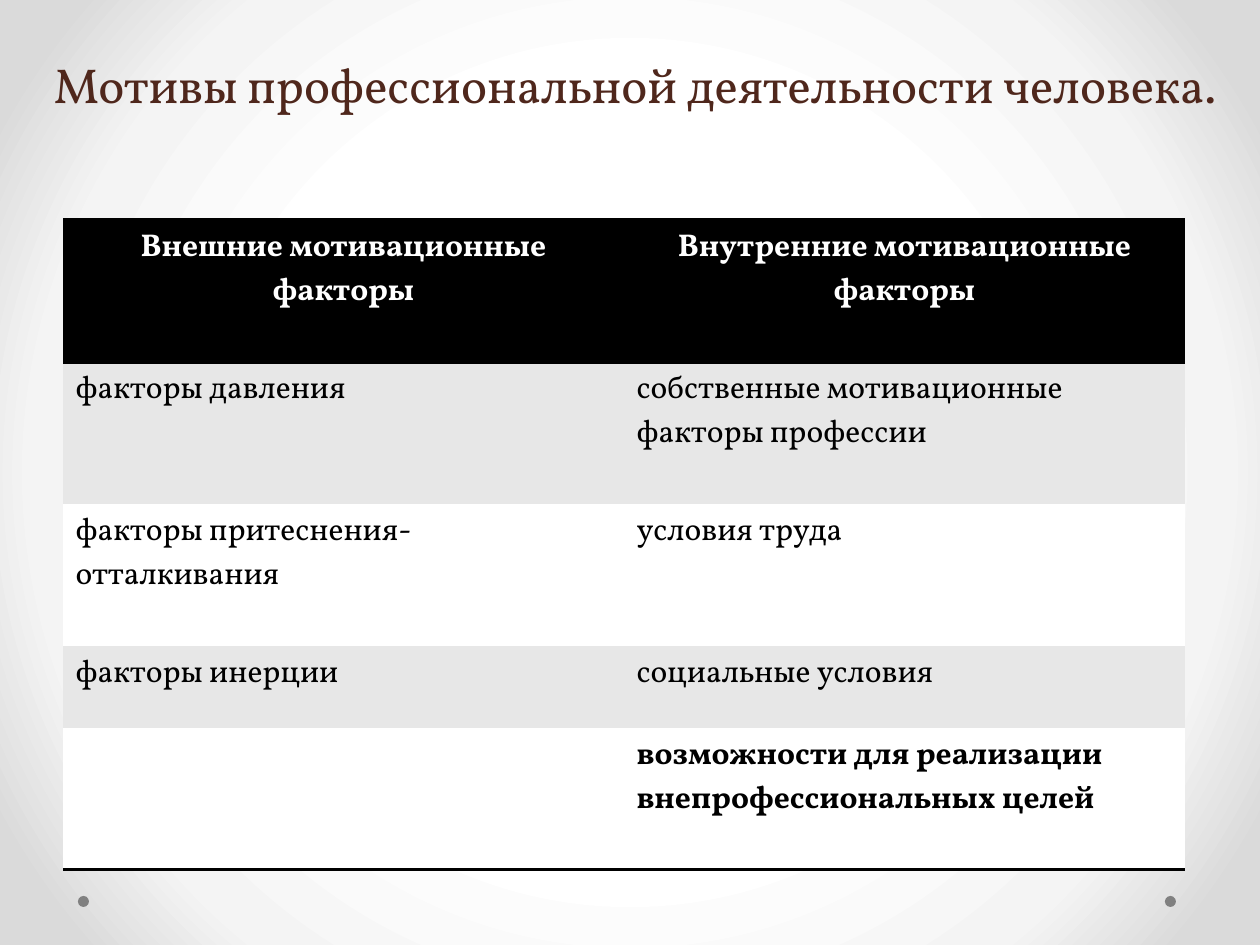
"""Build the slide on the motives of professional activity."""
from pptx import Presentation
from pptx.dml.color import RGBColor
from pptx.enum.shapes import MSO_SHAPE as Shape
from pptx.enum.text import MSO_ANCHOR as Anchor, PP_ALIGN as Align
from pptx.oxml import parse_xml
from pptx.oxml.ns import nsdecls, qn
from pptx.util import Emu, Pt

PX = 914400 // 126
BLACK = RGBColor(0x00, 0x00, 0x00)
WHITE = RGBColor(0xFF, 0xFF, 0xFF)
MIST = RGBColor(0xF4, 0xF4, 0xF4)
SILVER = RGBColor(0xDA, 0xDA, 0xDA)
BAND = RGBColor(0xE7, 0xE7, 0xE7)
GRAY = RGBColor(0x80, 0x80, 0x80)
BROWN = RGBColor(0x4F, 0x27, 0x1C)
PLAIN_STYLE = "{2D5ABB26-0587-4C30-8999-92F81FD0307C}"

FACTORS = [
    ("Внешние мотивационные факторы", "Внутренние мотивационные факторы"),
    ("факторы давления", "собственные мотивационные факторы профессии"),
    ("факторы притеснения-отталкивания", "условия труда"),
    ("факторы инерции", "социальные условия"),
    ("", "возможности для реализации внепрофессиональных целей"),
]
ROW_HEIGHTS = [142, 142, 142, 82, 142]


def px(*lengths):
    return [Emu(length * PX) for length in lengths]


def write(frame, text, *, size=18, color=BLACK, bold=False, align=Align.LEFT,
          spacing=None, font="Vollkorn"):
    paragraph = frame.paragraphs[0]
    paragraph.alignment = align
    if spacing:
        paragraph.line_spacing = Pt(spacing)
    style = paragraph.font
    if text:
        run = paragraph.add_run()
        run.text = text
        style = run.font
    style.name, style.size, style.bold = font, Pt(size), bold
    style.color.rgb = color


class Deck:
    def __init__(self, width, height):
        self.show = Presentation()
        self.show.slide_width, self.show.slide_height = px(width, height)
        self.slide = self.show.slides.add_slide(self.show.slide_layouts[6])

    def radial_background(self, stops):
        self.slide.background.fill.solid()
        holder = next(self.slide.element.iter(qn("p:bgPr")))
        marks = "".join(f'<a:gs pos="{percent * 1000}"><a:srgbClr val="{color}"/></a:gs>'
                        for percent, color in stops)
        holder.replace(holder[0], parse_xml(
            f'<a:gradFill {nsdecls("a")} rotWithShape="1"><a:gsLst>{marks}</a:gsLst>'
            '<a:path path="circle"><a:fillToRect l="50000" t="50000" r="50000" b="50000"/>'
            '</a:path></a:gradFill>'))

    def dot(self, left, top, size, color):
        dot = self.slide.shapes.add_shape(Shape.OVAL, *px(left, top, size, size))
        dot.shadow.inherit = False
        dot.fill.solid()
        dot.fill.fore_color.rgb = color
        dot.line.fill.background()

    def title(self, text, box, bottom_inset, **style):
        frame = self.slide.shapes.add_textbox(*px(*box)).text_frame
        frame.word_wrap = True
        frame.vertical_anchor = Anchor.BOTTOM
        frame.margin_bottom, = px(bottom_inset)
        write(frame, text, **style)

    def rule(self, cell, *sides):
        for side in sides:
            cell._tc.get_or_add_tcPr().append(parse_xml(
                f'<a:ln{side} {nsdecls("a")} w="{Pt(2)}"><a:solidFill>'
                f'<a:srgbClr val="{BLACK}"/></a:solidFill></a:ln{side}>'))

    def table(self, rows, heights, left, top, width):
        frame = self.slide.shapes.add_table(
            len(rows), len(rows[0]), *px(left, top, width, sum(heights)))
        table = frame.table
        table.horz_banding = False
        next(table._tbl.iter(qn("a:tableStyleId"))).text = PLAIN_STYLE
        last = len(rows) - 1
        for number, (texts, height) in enumerate(zip(rows, heights)):
            table.rows[number].height, = px(height)
            header = number == 0
            for column, text in enumerate(texts):
                cell = table.cell(number, column)
                if header:
                    self.rule(cell, "T", "B")
                elif number == last:
                    self.rule(cell, "B")
                cell.fill.solid()
                cell.fill.fore_color.rgb = BLACK if header else BAND if number % 2 else WHITE
                write(cell.text_frame, text, bold=number in (0, last),
                      color=WHITE if header else BLACK,
                      align=Align.CENTER if header else Align.LEFT)


def main():
    deck = Deck(1260, 945)
    deck.radial_background([(50, WHITE), (76, MIST), (92, SILVER)])
    for left in (1165, 78):
        deck.dot(left, 896, 11, GRAY)
    deck.title("Мотивы профессиональной деятельности человека.", (15, 0, 1240, 220), 107,
               size=28, color=BROWN, align=Align.CENTER, spacing=58)
    deck.table(FACTORS, ROW_HEIGHTS, 63, 220, 1122)
    deck.show.save("out.pptx")


if __name__ == "__main__":
    main()
